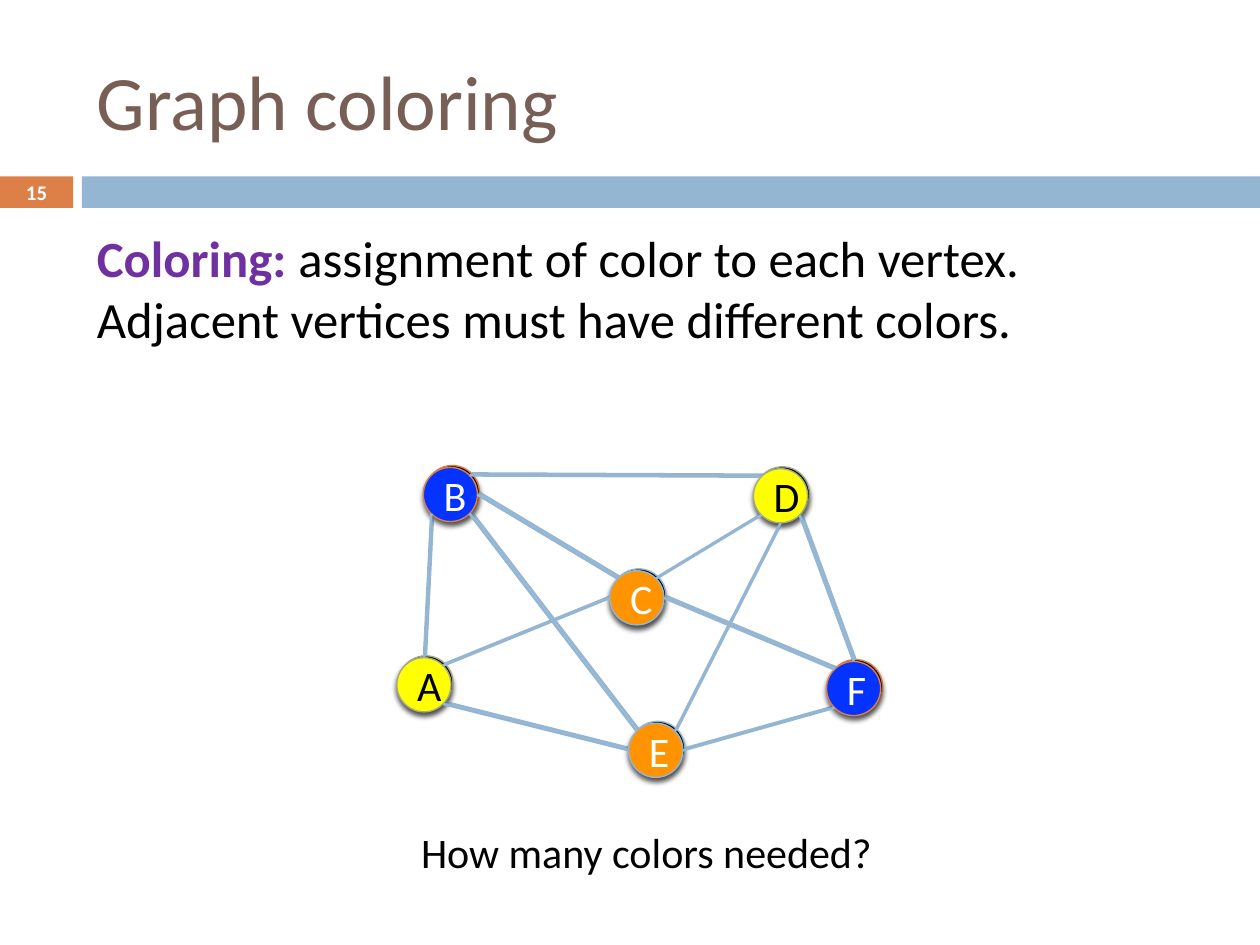
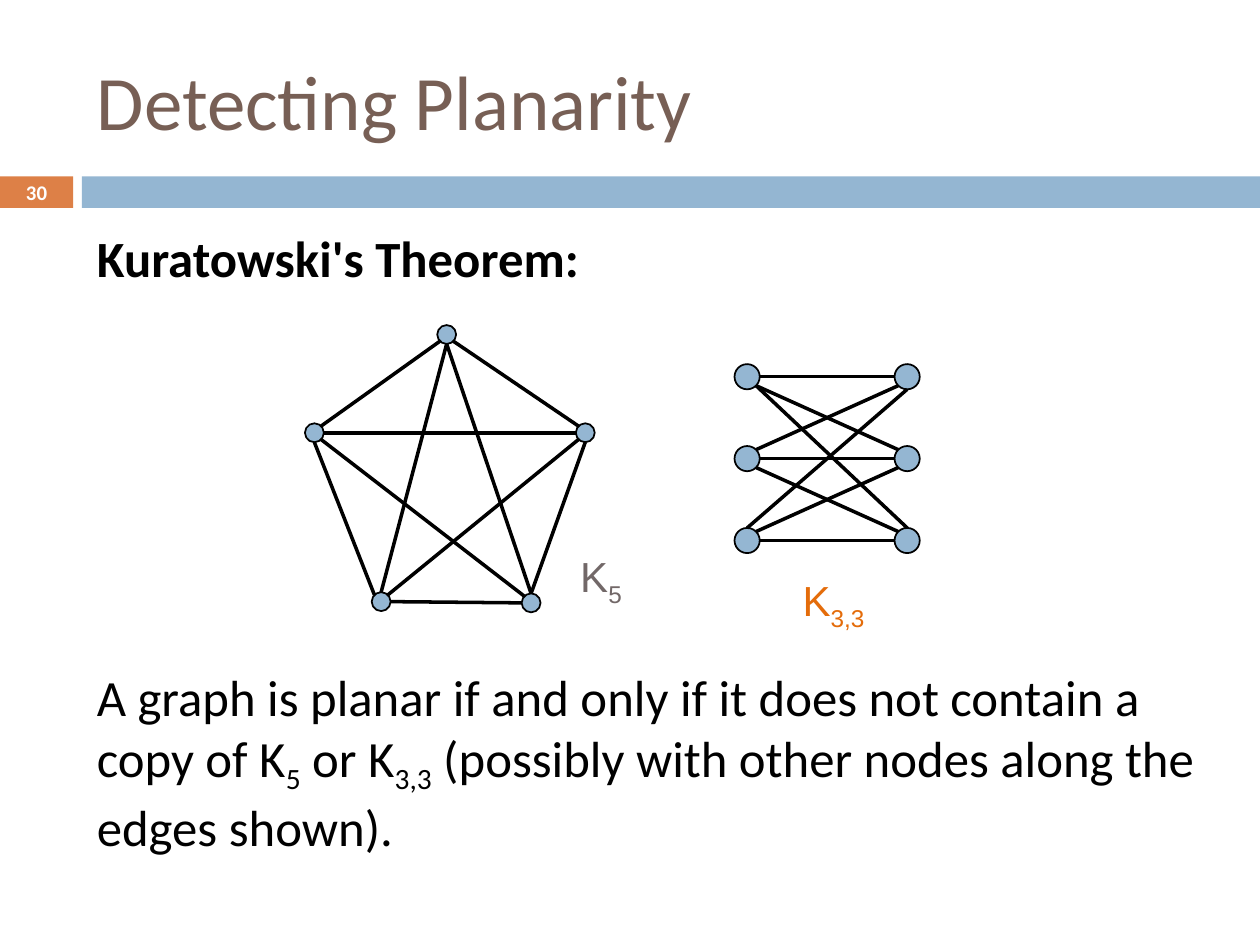
from dataclasses import dataclass
from math import cos, radians, sin

from lxml import etree
from pptx import Presentation
from pptx.dml.color import RGBColor
from pptx.enum.shapes import MSO_CONNECTOR, MSO_SHAPE
from pptx.enum.text import MSO_ANCHOR, PP_ALIGN
from pptx.oxml.ns import qn
from pptx.util import Inches, Pt

LINE = MSO_CONNECTOR.STRAIGHT
OVAL, RECTANGLE = MSO_SHAPE.OVAL, MSO_SHAPE.RECTANGLE
MIDDLE, TOP = MSO_ANCHOR.MIDDLE, MSO_ANCHOR.TOP
CENTER, LEFT = PP_ALIGN.CENTER, PP_ALIGN.LEFT

BLACK = RGBColor(0x00, 0x00, 0x00)
WHITE = RGBColor(0xFF, 0xFF, 0xFF)
BROWN = RGBColor(0x77, 0x5F, 0x55)
ORANGE = RGBColor(0xDD, 0x80, 0x47)
BLUE = RGBColor(0x94, 0xB6, 0xD2)
GREEN = RGBColor(0xA5, 0xAB, 0x81)
PURPLE = RGBColor(0x70, 0x30, 0xA0)
VERTEX_YELLOW = RGBColor(0xFF, 0xFF, 0x00)
VERTEX_BLUE = RGBColor(0x04, 0x32, 0xFF)
VERTEX_ORANGE = RGBColor(0xFF, 0x93, 0x00)
LABEL_GRAY = RGBColor(0x72, 0x68, 0x68)
LABEL_ORANGE = RGBColor(0xE4, 0x6C, 0x0A)

SLIDE_WIDTH, SLIDE_HEIGHT = Inches(10), Inches(7.5)
COLUMNS = 100
CELL = SLIDE_WIDTH // COLUMNS
COMPASS = {name: (cos(radians(45 * step)), sin(radians(45 * step)))
           for step, name in enumerate(("E", "SE", "S", "SW", "W", "NW", "N", "NE"))}


@dataclass
class Box:
    """An area of the slide, in grid columns and rows."""
    left: float
    top: float
    width: float
    height: float

    def inner(self, left, top, width, height):
        """Return a box placed relative to this one."""
        return Box(self.left + left, self.top + top, width, height)

    def lengths(self):
        """Return left, top, width and height as slide lengths."""
        return [round(value * CELL) for value in (self.left, self.top, self.width, self.height)]

    def site(self, direction):
        """Return the point of the inscribed ellipse in a compass direction."""
        x, y = COMPASS[direction]
        return (round((self.left + self.width * (1 + x) / 2) * CELL),
                round((self.top + self.height * (1 + y) / 2) * CELL))


TITLE_BOX = Box(6.7, 2.5, 89.2, 10.8)
BAND_BOX = Box(0, 14, 100, 2.5)
BODY_BOX = Box(6.7, 17.5, 89.2, 49.2)

COLORED_VERTICES = {
    "A": (0, 15.1, VERTEX_YELLOW, GREEN, BLACK),
    "B": (2.1, 0, VERTEX_BLUE, ORANGE, WHITE),
    "C": (16.9, 8.2, VERTEX_ORANGE, BLUE, WHITE),
    "D": (28.3, 0.1, VERTEX_YELLOW, GREEN, BLACK),
    "E": (18.4, 20.3, VERTEX_ORANGE, BLUE, WHITE),
    "F": (34.1, 15.4, VERTEX_BLUE, ORANGE, WHITE),
}
COLORED_EDGES = [
    ("B", "NE", "D", "NW"), ("B", "E", "C", "NW"), ("B", "SE", "E", "NW"),
    ("A", "NE", "C", "W"), ("A", "N", "B", "SW"), ("A", "SE", "E", "W"),
    ("C", "E", "F", "NW"), ("D", "SE", "F", "N"), ("C", "NE", "D", "SW"),
    ("D", "S", "E", "NE"), ("E", "E", "F", "SW"),
]
K5_VERTICES = {
    "left": (0, 7.8), "top": (10.5, 0), "right": (21.5, 7.8),
    "low left": (5.3, 21.2), "low right": (17.2, 21.3),
}
K5_EDGES = [
    ("left", "NE", "top", "SW"), ("left", "S", "low left", "NW"),
    ("top", "SE", "right", "NW"), ("low left", "E", "low right", "W"),
    ("low right", "N", "right", "S"), ("left", "SE", "low right", "NW"),
    ("low left", "NE", "right", "SW"), ("left", "E", "right", "W"),
    ("low left", "N", "top", "S"), ("low right", "N", "top", "S"),
]
K33_VERTICES = {(side, row): (12.7 * side, 6.5 * row) for side in range(2) for row in range(3)}
K33_SITES = {0: ("E", "W"), 1: ("SE", "NW"), 2: ("SE", "N"), -1: ("NE", "SW"), -2: ("N", "S")}
K33_EDGES = [((0, start), K33_SITES[end - start][0], (1, end), K33_SITES[end - start][1])
             for start in range(3) for end in range(3)]


def write_runs(paragraph, runs, size, font="Calibri"):
    """Add (text, color, bold, subscript) runs to a paragraph."""
    for text, color, bold, subscript in runs:
        run = paragraph.add_run()
        run.text = text
        run.font.size, run.font.name, run.font.bold = Pt(size), font, bold
        run.font.color.rgb = color
        if subscript:
            run.font._element.set("baseline", "-25000")


def add_text(slide, box, runs, size, align=LEFT, anchor=TOP, font="Calibri"):
    """Add a wrapping text box with one paragraph and return its frame."""
    frame = slide.shapes.add_textbox(*box.lengths()).text_frame
    frame.word_wrap = True
    frame.vertical_anchor = anchor
    frame.paragraphs[0].alignment = align
    write_runs(frame.paragraphs[0], runs, size, font)
    return frame


def add_filled(slide, kind, box, fill, outline=None, weight=1):
    """Add a preset shape without shadow, outlined when a color is given."""
    shape = slide.shapes.add_shape(kind, *box.lengths())
    shape.shadow.inherit = False
    shape.fill.solid()
    shape.fill.fore_color.rgb = fill
    if outline is None:
        shape.line.fill.background()
    else:
        shape.line.color.rgb = outline
        shape.line.width = Pt(weight)
    return shape


def add_soft_shadow(shape):
    """Give a shape a short downward shadow."""
    effects = shape._element.spPr.find(qn("a:effectLst"))
    shadow = etree.SubElement(effects, qn("a:outerShdw"), blurRad="38100", dist="30480",
                              dir="5400000", rotWithShape="0")
    color = etree.SubElement(shadow, qn("a:srgbClr"), val=str(BLACK))
    etree.SubElement(color, qn("a:alpha"), val="45000")


def add_edges(slide, boxes, edges, color, weight):
    """Join vertex boxes with straight lines between compass sites."""
    for start, start_site, end, end_site in edges:
        edge = slide.shapes.add_connector(LINE, *boxes[start].site(start_site),
                                          *boxes[end].site(end_site))
        edge.line.color.rgb = color
        edge.line.width = Pt(weight)
        etree.SubElement(edge._element.spPr, qn("a:effectLst"))


def add_lettered_graph(slide, box, colored):
    """Draw the six lettered vertices, colored or black, and their edges."""
    boxes = {}
    for letter, (left, top, fill, outline, ink) in COLORED_VERTICES.items():
        boxes[letter] = box.inner(left, top, 4.3, 4.3)
        vertex = add_filled(slide, OVAL, boxes[letter], fill if colored else BLACK, outline, 0.79)
        add_soft_shadow(vertex)
        vertex.text_frame.vertical_anchor = MIDDLE
        paragraph = vertex.text_frame.paragraphs[0]
        paragraph.alignment = CENTER
        write_runs(paragraph, [(letter, ink if colored else WHITE, False, False)], 24)
    add_edges(slide, boxes, COLORED_EDGES, BLUE, 1.5)


def add_plain_graph(slide, box, vertices, diameter, edges):
    """Draw unlabelled vertices with black edges."""
    boxes = {name: box.inner(*place, diameter, diameter) for name, place in vertices.items()}
    for vertex_box in boxes.values():
        add_filled(slide, OVAL, vertex_box, BLUE, BLACK)
    add_edges(slide, boxes, edges, BLACK, 2)


def add_graph_name(slide, box, subscript, color):
    """Write K with a subscript below a graph."""
    runs = [("K", color, False, False), (subscript, color, False, True)]
    frame = add_text(slide, box, runs, 24, CENTER, font="Arial")
    frame.margin_top = frame.margin_bottom = 0
    frame.margin_left = frame.margin_right = Inches(0.04)
    frame.paragraphs[0].space_before = Pt(14)


def add_base_slide(presentation, title, number):
    """Add a blank slide with title, band and slide number."""
    slide = presentation.slides.add_slide(presentation.slide_layouts[6])
    number_box = BAND_BOX.inner(0, 0, 5.8, BAND_BOX.height)
    add_filled(slide, RECTANGLE, number_box, ORANGE)
    add_filled(slide, RECTANGLE, BAND_BOX.inner(6.5, 0, 93.5, BAND_BOX.height), BLUE)
    add_text(slide, TITLE_BOX, [(title, BROWN, False, False)], 44, anchor=MIDDLE)
    add_text(slide, number_box, [(number, WHITE, True, False)], 11.9, CENTER, MIDDLE)
    return slide


def add_coloring_slide(presentation):
    """Build the graph coloring slide."""
    slide = add_base_slide(presentation, "Graph coloring", "15")
    definition = [
        ("Coloring: ", PURPLE, True, False),
        ("assignment of color to each vertex. Adjacent vertices must have different colors.",
         BLACK, False, False),
    ]
    frame = add_text(slide, BODY_BOX, definition, 29)
    frame.paragraphs[0].space_before = Pt(7)
    graph_box = Box(31.5, 37.1, 38.4, 24.6)
    add_lettered_graph(slide, graph_box.inner(0.15, -0.15, 38.4, 24.6), False)
    add_text(slide, Box(26.3, 65.1, 50, 5),
             [("How many colors needed?", BLACK, False, False)], 24, CENTER)
    add_lettered_graph(slide, graph_box, True)


def add_planarity_slide(presentation):
    """Build the planarity slide with K5 and K3,3."""
    slide = add_base_slide(presentation, "Detecting Planarity", "30")
    frame = add_text(slide, BODY_BOX, [("Kuratowski's Theorem:", BLACK, True, False)], 29)
    frame.paragraphs[0].space_before = Pt(7)
    theorem = frame.add_paragraph()
    theorem.space_before = Pt(216)
    write_runs(theorem, [
        ("A graph is planar if and only if it does not contain a copy of K", BLACK, False, False),
        ("5", BLACK, False, True),
        (" or K", BLACK, False, False),
        ("3,3", BLACK, False, True),
        (" (possibly with other nodes along the edges shown).", BLACK, False, False),
    ], 29)
    k5_box = Box(24.2, 25.8, 23, 22.8)
    add_plain_graph(slide, k5_box, K5_VERTICES, 1.5, K5_EDGES)
    add_graph_name(slide, k5_box.inner(17.9, 17.9, 11.2, 4.6), "5", LABEL_GRAY)
    k33_box = Box(58.3, 28.9, 14.7, 15)
    add_plain_graph(slide, k33_box, K33_VERTICES, 2, K33_EDGES)
    add_graph_name(slide, k33_box.inner(-1.4, 16.7, 18.5, 3.9), "3,3", LABEL_ORANGE)


def main():
    """Build and save the presentation."""
    presentation = Presentation()
    presentation.slide_width, presentation.slide_height = SLIDE_WIDTH, SLIDE_HEIGHT
    add_coloring_slide(presentation)
    add_planarity_slide(presentation)
    presentation.save("out.pptx")


if __name__ == "__main__":
    main()
